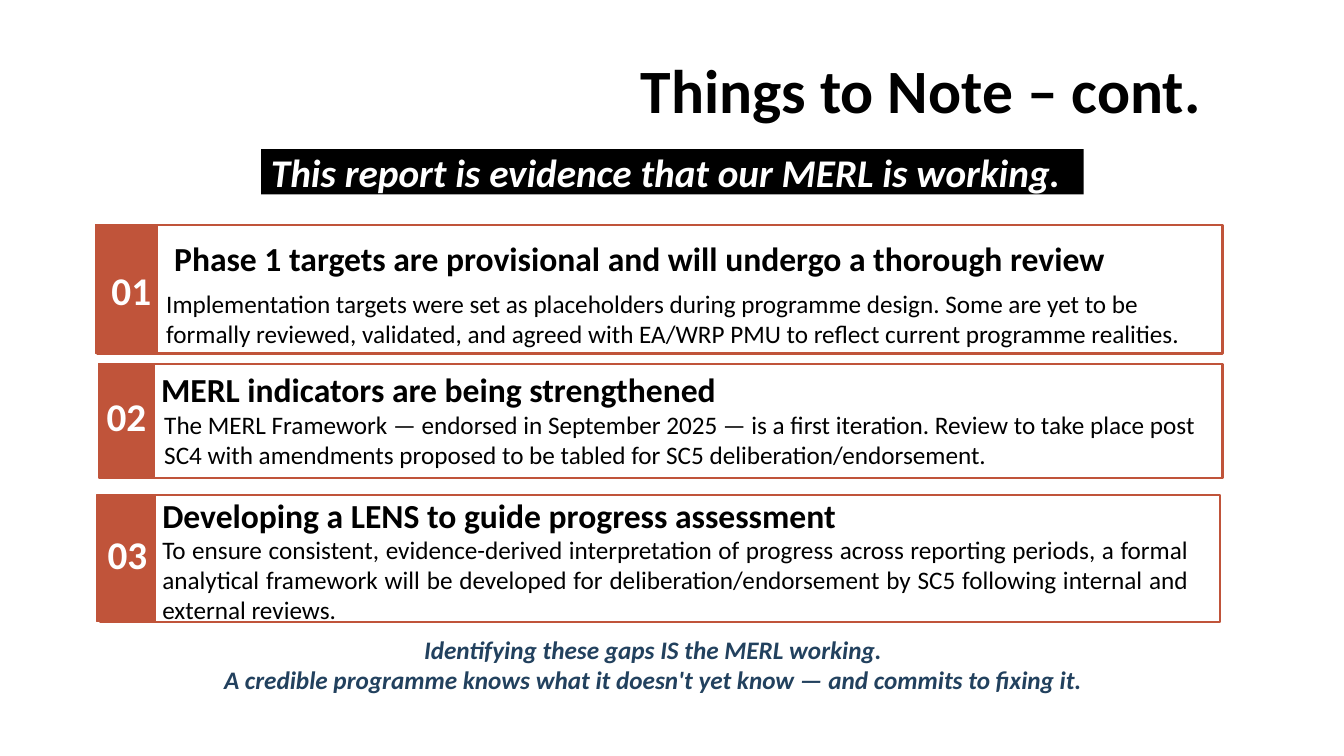
from pptx import Presentation
from pptx.dml.color import RGBColor
from pptx.enum.shapes import MSO_SHAPE
from pptx.enum.text import MSO_ANCHOR, PP_ALIGN
from pptx.oxml.ns import qn
from pptx.util import Cm, Pt
from lxml import etree

BLACK = RGBColor(0x00, 0x00, 0x00)
WHITE = RGBColor(0xFF, 0xFF, 0xFF)
RUST = RGBColor(0xC0, 0x54, 0x3A)
NAVY = RGBColor(0x22, 0x41, 0x5E)
FONT = "Calibri"
RECTANGLE = MSO_SHAPE.RECTANGLE
TOP, MIDDLE = MSO_ANCHOR.TOP, MSO_ANCHOR.MIDDLE
LEFT, CENTER, JUSTIFY = PP_ALIGN.LEFT, PP_ALIGN.CENTER, PP_ALIGN.JUSTIFY

CARDS = [
    {
        "box": (2.44, 5.66, 28.37, 3.25),
        "tab": (-0.03, 0, 1.55, 3.25),
        "number": (0.07, 0.89, 1.6, 1.5),
        "heading": (1.7, 0.13, 26.52, 1.42),
        "body": (1.5, 1.48, 26.72, 1.65),
        "align": LEFT,
        "title": "Phase 1 targets are provisional and will undergo a thorough review",
        "detail": "Implementation targets were set as placeholders during programme design. "
                  "Some are yet to be formally reviewed, validated, and agreed with EA/WRP PMU "
                  "to reflect current programme realities.",
    },
    {
        "box": (2.49, 9.17, 28.32, 2.87),
        "tab": (0, 0, 1.4, 2.87),
        "number": (-0.08, 0.56, 1.55, 1.5),
        "heading": (1.32, 0.13, 26.39, 0.99),
        "body": (1.4, 1.02, 26.72, 1.78),
        "align": LEFT,
        "title": "MERL indicators are being strengthened",
        "detail": "The MERL Framework — endorsed in September 2025 — is a first iteration. "
                  "Review to take place post SC4 with amendments proposed to be tabled for "
                  "SC5 deliberation/endorsement.",
    },
    {
        "box": (2.51, 12.47, 28.24, 3.2),
        "tab": (-0.07, 0, 1.47, 3.2),
        "number": (-0.12, 0.76, 1.65, 1.47),
        "heading": (1.33, -0.1, 26.37, 1.22),
        "body": (1.33, 0.87, 26.37, 2.29),
        "align": JUSTIFY,
        "title": "Developing a LENS to guide progress assessment",
        "detail": "To ensure consistent, evidence-derived interpretation of progress across "
                  "reporting periods, a formal analytical framework will be developed for "
                  "deliberation/endorsement by SC5 following internal and external reviews.",
    },
]


def write(holder, text, size, color=BLACK, bold=True, italic=False, align=LEFT, anchor=MIDDLE):
    """Put formatted text into a shape or text box."""
    frame = holder.text_frame
    frame.word_wrap = True
    frame.vertical_anchor = anchor
    frame.text = text
    for paragraph in frame.paragraphs:
        paragraph.alignment = align
        for run in paragraph.runs:
            run.font.name = FONT
            run.font.size = Pt(size)
            run.font.bold = bold
            run.font.italic = italic
            run.font.color.rgb = color


def add_label(slide, box, text, size, **style):
    """Add a text box with formatted text."""
    write(slide.shapes.add_textbox(*map(Cm, box)), text, size, **style)


def add_panel(slide, box, fill, line=None, width=1):
    """Add a flat rectangle and return it."""
    panel = slide.shapes.add_shape(RECTANGLE, *map(Cm, box))
    panel.shadow.inherit = False
    panel.fill.solid()
    panel.fill.fore_color.rgb = fill
    if line is None:
        panel.line.fill.background()
    else:
        panel.line.color.rgb = line
        panel.line.width = Pt(width)
    return panel


def add_header(slide, title_box, banner_box):
    """Add the title and the black banner below it."""
    add_label(slide, title_box, "Things to Note – cont.", 44)
    banner = add_panel(slide, banner_box, BLACK)
    write(banner, "This report is evidence that our MERL is working.", 28, color=WHITE, italic=True)


def add_card(slide, number, card):
    """Add one numbered card with its parts offset from the card box."""
    left, top = card["box"][:2]

    def place(part):
        """Return the box of a part on the slide."""
        dx, dy, width, height = card[part]
        return left + dx, top + dy, width, height

    frame = add_panel(slide, card["box"], WHITE, RUST, 1.5)
    frame_color = next(frame.element.spPr.iter(qn("a:srgbClr")))
    etree.SubElement(frame_color, qn("a:alpha")).set("val", "90000")
    add_panel(slide, place("tab"), RUST, RUST)
    add_label(slide, place("number"), f"{number:02d}", 28, color=WHITE, align=CENTER)
    add_label(slide, place("heading"), card["title"], 24)
    add_label(slide, place("body"), card["detail"], 18, bold=False,
              align=card["align"], anchor=TOP)


def add_closing(slide, box):
    """Add the closing statement."""
    statement = ("Identifying these gaps IS the MERL working.\n"
                 "A credible programme knows what it doesn't yet know — and commits to fixing it.")
    add_label(slide, box, statement, 18, color=NAVY, italic=True, align=CENTER)


def main():
    """Build and save the slide."""
    deck = Presentation()
    deck.slide_width, deck.slide_height = Cm(33.87), Cm(19.05)
    slide = deck.slides.add_slide(deck.slide_layouts[6])
    add_header(slide, (15.9, 1.35, 14.91, 1.78), (6.58, 3.76, 20.73, 1.14))
    for number, card in enumerate(CARDS, 1):
        add_card(slide, number, card)
    add_closing(slide, (2.11, 16, 28.7, 1.47))
    deck.save("out.pptx")


if __name__ == "__main__":
    main()
